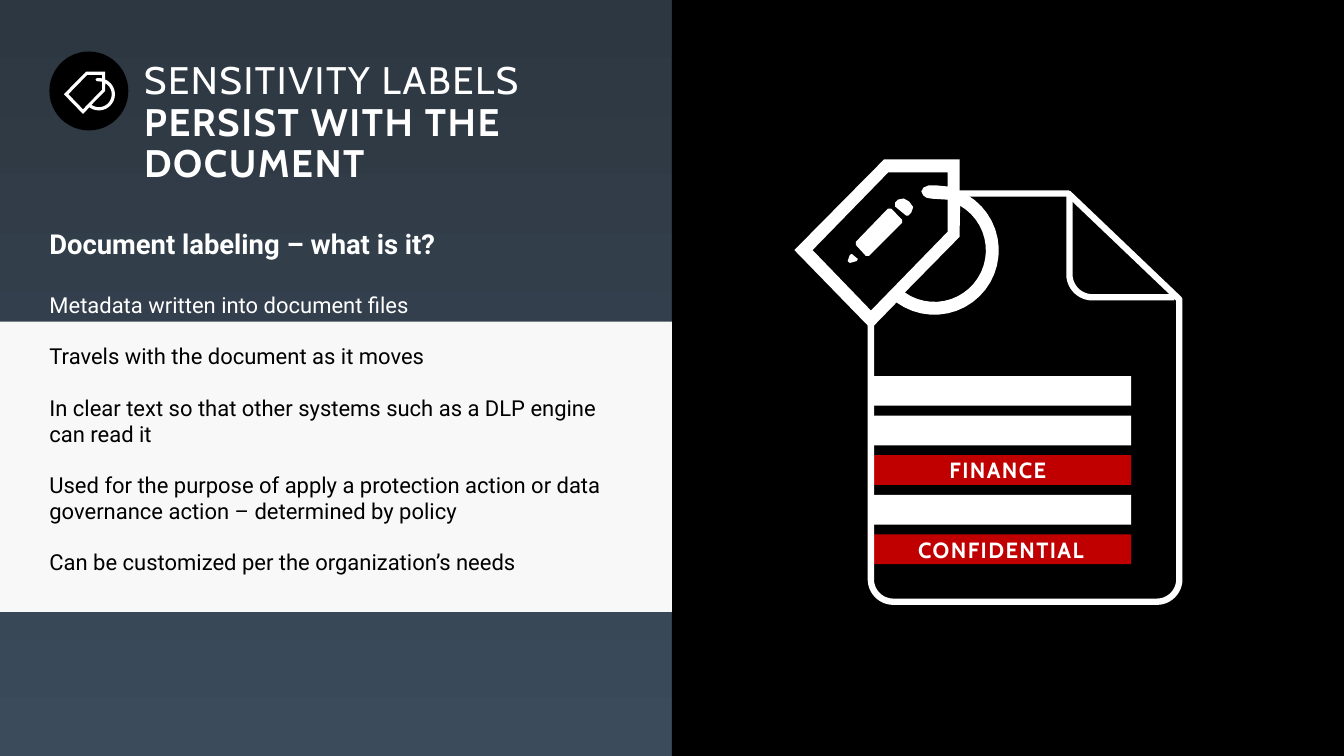
import math
from lxml import etree
from pptx import Presentation
from pptx.dml.color import RGBColor
from pptx.enum.shapes import MSO_SHAPE
from pptx.enum.text import MSO_ANCHOR, MSO_AUTO_SIZE, PP_ALIGN
from pptx.oxml.ns import qn
from pptx.util import Pt

RECTANGLE = MSO_SHAPE.RECTANGLE
OVAL = MSO_SHAPE.OVAL
TRIANGLE = MSO_SHAPE.FLOWCHART_EXTRACT
MIDDLE = MSO_ANCHOR.MIDDLE
NO_FIT = MSO_AUTO_SIZE.NONE
LEFT, CENTER = PP_ALIGN.LEFT, PP_ALIGN.CENTER

hexes = {"black": "000000", "white": "FFFFFF", "red": "C00000",
         "panel": "F8F8F8", "slate": "2D3741", "steel": "3B4B5B"}
colors = {name: RGBColor.from_string(value) for name, value in hexes.items()}


def arc(x, y, radius, start, end, steps=24):
    angles = [math.radians(start + (end - start) * i / steps) for i in range(steps + 1)]
    return [(x + radius * math.cos(a), y + radius * math.sin(a)) for a in angles]


def draw_outline(contours, left=0, top=0, scale=1, close=True):
    placed = [[(Pt(left + x * scale), Pt(top + y * scale)) for x, y in contour]
              for contour in contours]
    builder = page.shapes.build_freeform(*placed[0][0], scale=1.0)
    for number, contour in enumerate(placed):
        if number:
            builder.move_to(*contour[0])
        builder.add_line_segments(contour[1:], close=close)
    shape = builder.convert_to_shape()
    shape.shadow.inherit = False
    return shape


deck = Presentation()
deck.slide_width, deck.slide_height = Pt(960), Pt(540)
page = deck.slides.add_slide(deck.slide_layouts[1])
backdrop = page.background.fill
backdrop.gradient()
backdrop.gradient_angle = 270
for stop, position, name in zip(backdrop.gradient_stops, (0, 1), ("slate", "steel")):
    stop.position = position
    stop.color.rgb = colors[name]

blocks = [
    (OVAL, 35.3, 36.8, 56.4, 56.4, 0, "black", ""),
    (RECTANGLE, 480, 0, 480, 540, 0, "black", ""),
    (RECTANGLE, 0, 229.7, 480, 207.4, 0, "panel", ""),
]
for row, label in enumerate(["", "", "FINANCE ", "", "CONFIDENTIAL"]):
    blocks.append((RECTANGLE, 622.1, 268.6 + row * 28.3, 185.8, 21.2, 0,
                   "red" if label else "white", label))
tag_backing = [
    (RECTANGLE, 591.8, 131, 72, 85.7, 42.7, "black", ""),
    (TRIANGLE, 631.4, 110.2, 72, 39.6, 42.7, "black", ""),
]

document_edge = [(639, 138.2), *arc(638.1, 154.2, 16, 270, 180), *arc(638.1, 413.8, 16, 180, 90),
                 *arc(826.4, 413.8, 16, 90, 0), (842.4, 213.8), (763.2, 138.2)]
document_fold = [(838.8, 212.4), *arc(780.4, 195.9, 16.5, 90, 180), (763.9, 138.2)]

for group in (blocks, tag_backing):
    for kind, left, top, width, height, turn, color, label in group:
        block = page.shapes.add_shape(kind, Pt(left), Pt(top), Pt(width), Pt(height))
        block.shadow.inherit = False
        block.rotation = turn
        block.fill.solid()
        block.fill.fore_color.rgb = colors[color]
        block.line.fill.background()
        if label:
            frame = block.text_frame
            frame.margin_left = frame.margin_right = 0
            frame.vertical_anchor = MIDDLE
            frame.text = label
            para = frame.paragraphs[0]
            para.alignment = CENTER
            span = para.runs[0]
            span.font.name, span.font.size, span.font.bold = "Cabin", Pt(15.7), True
            span.font.color.rgb = colors["white"]
            span.font._element.set("spc", "100")
    if group is blocks:
        for edge, close in ((document_edge, True), (document_fold, False)):
            stroke = draw_outline([edge], close=close)
            stroke.fill.background()
            stroke.line.color.rgb = colors["white"]
            stroke.line.width = Pt(4.5)

tag = [
    [(118, 22), *arc(100, 65, 46, -67, 126), (54.7, 121), (0, 64.8), (64.1, 0), (118, 0)],
    [(54.7, 108), (109.4, 51.8), (109.4, 28.8), (97.9, 28.1), (94.3, 27.4), (92.2, 25.9),
     (90.7, 23), (92.2, 20.2), (95.8, 18.7), (102.2, 18.7), (109.4, 19.4), (109.4, 9.4),
     (67, 9.4), (13, 64.8)],
    [*arc(100, 65, 36.8, 125, -60), (118, 55.4)],
]
pencil = [
    [(612, 186.5), (612.7, 185), (608.4, 181.4), (607, 182.2), (605.5, 186.5), (607, 187.9)],
    [(641.5, 142.6), (639.4, 144.7), (639.4, 147.6), (647.3, 154.1), (648.7, 154.1),
     (650.9, 151.9), (652.3, 148), (649.4, 144), (645.5, 141.8)],
    [(620.6, 182.9), (618.5, 182.9), (611.3, 175), (611.3, 172.8), (634.3, 149),
     (636.5, 149), (644.4, 157), (644.4, 159.1)],
]
for contours, left, top, scale in ((tag, 45.6, 51.1, 0.25), (pencil, 0, 0, 1),
                                   (tag, 567.4, 113.8, 1)):
    icon = draw_outline(contours, left, top, scale)
    icon.fill.solid()
    icon.fill.fore_color.rgb = colors["white"]
    icon.line.fill.background()

title, body = page.placeholders
for box, left, top, width, height, margins in (
        (title, 91.4, 37.4, 338.4, 102.2, (11.5, 7.2, 0, 7.2)),
        (body, 35.3, 163.4, 409.7, 246.2, (0, 3.6, 7.2, 3.6))):
    box.left, box.top, box.width, box.height = Pt(left), Pt(top), Pt(width), Pt(height)
    frame = box.text_frame
    frame.margin_left, frame.margin_top, frame.margin_right, frame.margin_bottom = map(Pt, margins)
    frame.vertical_anchor = MIDDLE
    frame.word_wrap = True
    frame.auto_size = NO_FIT
    page.shapes._spTree.append(box._element)

para = title.text_frame.paragraphs[0]
para.alignment = LEFT
para.line_spacing = 0.9
for words, bold in (("SENSITIVITY LABELS ", False), ("PERSIST WITH THE DOCUMENT", True)):
    span = para.add_run()
    span.text = words
    span.font.name, span.font.size, span.font.bold = "Cabin", Pt(27.4), bold
    span.font.color.rgb = colors["white"]
    span.font._element.set("spc", "120")

lines = [
    ("Document labeling – what is it?", 19.6, True, "white", 23),
    ("Metadata written into document files", 15.7, False, "white", 17.6),
    ("Travels with the document as it moves", 15.7, False, "black", 17.6),
    ("In clear text so that other systems such as a DLP engine can read it",
     15.7, False, "black", 17.6),
    ("Used for the purpose of apply a protection action or data governance action "
     "– determined by policy", 15.7, False, "black", 17.6),
    ("Can be customized per the organization’s needs", 15.7, False, "black", 17.6),
]
body.text_frame.text = "\n".join(line[0] for line in lines)
for para, (words, size, bold, color, gap) in zip(body.text_frame.paragraphs, lines):
    properties = para._p.get_or_add_pPr()
    properties.set("marL", "0")
    properties.set("indent", "0")
    etree.SubElement(properties, qn("a:buNone"))
    para.space_before = Pt(0)
    para.space_after = Pt(gap)
    span = para.runs[0]
    span.font.name, span.font.size, span.font.bold = "Roboto", Pt(size), bold
    span.font.color.rgb = colors[color]

deck.save("out.pptx")
